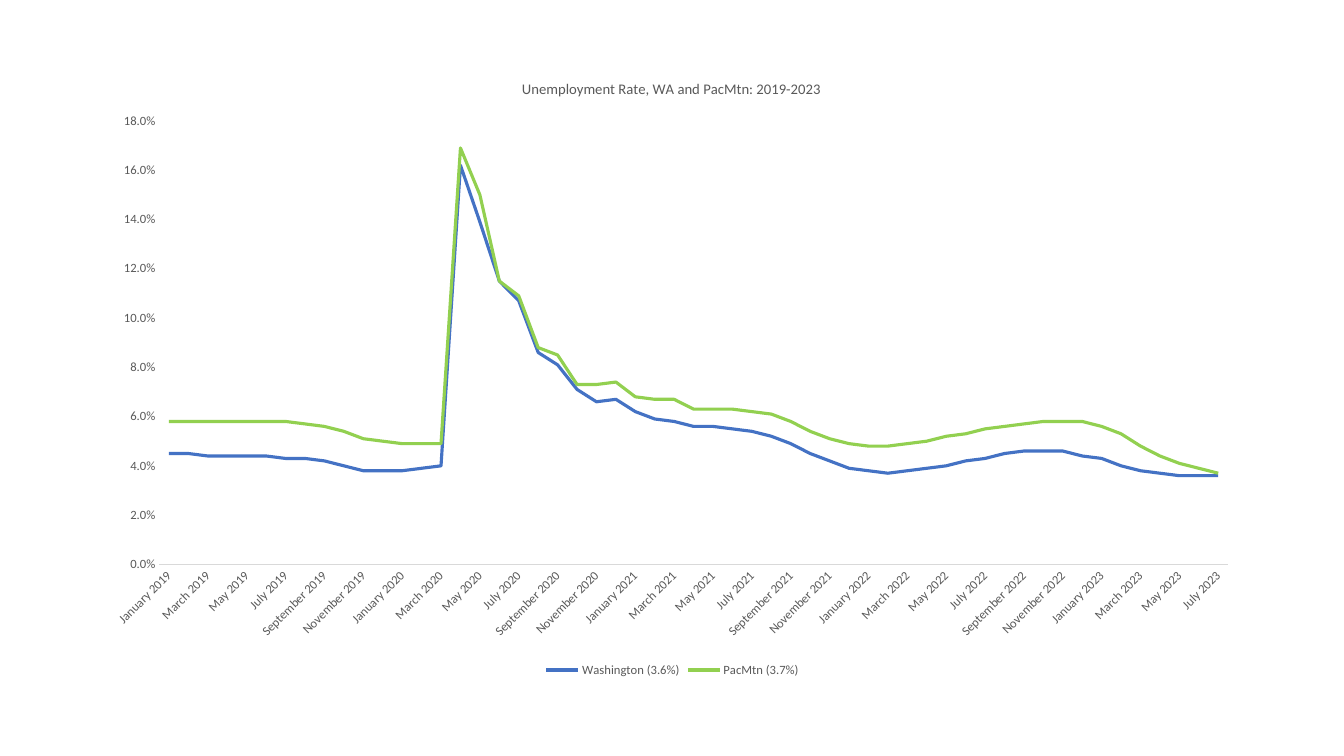
from dataclasses import dataclass

from lxml import etree
from pptx import Presentation
from pptx.chart.chart import Chart
from pptx.chart.data import CategoryChartData
from pptx.dml.color import RGBColor
from pptx.enum.chart import XL_CHART_TYPE, XL_LEGEND_POSITION, XL_MARKER_STYLE, XL_TICK_MARK
from pptx.oxml.ns import qn
from pptx.text.text import Font
from pptx.util import Inches, Pt

LINE = XL_CHART_TYPE.LINE
BOTTOM = XL_LEGEND_POSITION.BOTTOM
NO_MARKER = XL_MARKER_STYLE.NONE
NO_TICK = XL_TICK_MARK.NONE
FONT_NAME = "Calibri"
TEXT_COLOR = "595959"
AXIS_COLOR = "D9D9D9"
TITLE = "Unemployment Rate, WA and PacMtn: 2019-2023"
MONTHS = ("January", "February", "March", "April", "May", "June", "July",
          "August", "September", "October", "November", "December")


@dataclass(frozen=True)
class Rate:
    """Monthly unemployment in percent for one area."""

    name: str
    color: str
    percents: tuple[float, ...]


@dataclass(frozen=True)
class Box:
    """A place on the slide in inches."""

    left: float
    top: float
    width: float
    height: float


CHART_BOX = Box(0.92, 0.57, 11.5, 6.19)
PLOT_BOX = Box(1.58, 1.2, 10.6, 4.4)
TITLE_BOX = Box(5.15, 0.76, 3, 0.2)

RATES = (
    Rate("Washington (3.6%)", "4472C4", (
        4.5, 4.5, 4.4, 4.4, 4.4, 4.4, 4.3, 4.3, 4.2, 4.0, 3.8, 3.8,
        3.8, 3.9, 4.0, 16.2, 13.9, 11.5, 10.7, 8.6, 8.1, 7.1, 6.6, 6.7,
        6.2, 5.9, 5.8, 5.6, 5.6, 5.5, 5.4, 5.2, 4.9, 4.5, 4.2, 3.9,
        3.8, 3.7, 3.8, 3.9, 4.0, 4.2, 4.3, 4.5, 4.6, 4.6, 4.6, 4.4,
        4.3, 4.0, 3.8, 3.7, 3.6, 3.6, 3.6)),
    Rate("PacMtn (3.7%)", "92D050", (
        5.8, 5.8, 5.8, 5.8, 5.8, 5.8, 5.8, 5.7, 5.6, 5.4, 5.1, 5.0,
        4.9, 4.9, 4.9, 16.9, 15.0, 11.5, 10.9, 8.8, 8.5, 7.3, 7.3, 7.4,
        6.8, 6.7, 6.7, 6.3, 6.3, 6.3, 6.2, 6.1, 5.8, 5.4, 5.1, 4.9,
        4.8, 4.8, 4.9, 5.0, 5.2, 5.3, 5.5, 5.6, 5.7, 5.8, 5.8, 5.8,
        5.6, 5.3, 4.8, 4.4, 4.1, 3.9, 3.7)),
)


def rgb(color: str) -> RGBColor:
    """Turn a hex string into a colour."""
    return RGBColor.from_string(color)


def style_font(font: Font, size: float) -> None:
    """Give chart text its face, size and colour."""
    font.name = FONT_NAME
    font.size = Pt(size)
    font.bold = False
    font.color.rgb = rgb(TEXT_COLOR)


def place_part(part: etree._Element, index: int, box: Box, sized: bool) -> None:
    """Fix a chart part at a place on the slide."""
    for old_layout in part.findall(qn("c:layout")):
        part.remove(old_layout)
    layout = etree.Element(qn("c:layout"))
    part.insert(index, layout)
    manual = etree.SubElement(layout, qn("c:manualLayout"))
    settings = {
        "xMode": "edge",
        "yMode": "edge",
        "x": (box.left - CHART_BOX.left) / CHART_BOX.width,
        "y": (box.top - CHART_BOX.top) / CHART_BOX.height,
    }
    if sized:
        settings = {"layoutTarget": "inner", **settings,
                    "w": box.width / CHART_BOX.width,
                    "h": box.height / CHART_BOX.height}
    for name, value in settings.items():
        etree.SubElement(manual, qn(f"c:{name}")).set("val", str(value))


def style_title(chart: Chart) -> None:
    """Write and place the chart title."""
    title = chart.chart_title
    title.include_in_layout = False
    title.text_frame.text = TITLE
    style_font(title.text_frame.paragraphs[0].font, 10.5)
    place_part(title._element, 1, TITLE_BOX, sized=False)


def style_axes(chart: Chart) -> None:
    """Format the month and percent axes."""
    months, percents = chart.category_axis, chart.value_axis
    for axis in (months, percents):
        axis.major_tick_mark = NO_TICK
        axis.minor_tick_mark = NO_TICK
        axis.has_major_gridlines = False
        style_font(axis.tick_labels.font, 9)
    months.format.line.color.rgb = rgb(AXIS_COLOR)
    months.format.line.width = Pt(0.75)
    months._element.find(qn("c:txPr")).find(qn("a:bodyPr")).set("rot", "-60000000")
    percents.format.line.fill.background()
    percents.minimum_scale = 0
    percents.maximum_scale = 0.18
    percents.major_unit = 0.02
    percents.tick_labels.number_format = "#0.0%"
    percents.tick_labels.number_format_is_linked = False


def style_series(chart: Chart) -> None:
    """Draw each area as a plain coloured line."""
    chart.plots[0].vary_by_categories = False
    for series, rate in zip(chart.plots[0].series, RATES):
        series.smooth = False
        series.marker.style = NO_MARKER
        series.format.line.color.rgb = rgb(rate.color)
        series.format.line.width = Pt(2.25)


def main() -> None:
    """Build and save the unemployment slide."""
    deck = Presentation()
    deck.slide_width, deck.slide_height = Inches(13.33), Inches(7.5)
    page = deck.slides.add_slide(deck.slide_layouts[6])

    data = CategoryChartData(number_format="0.0%")
    months = [f"{month} {year}" for year in range(2019, 2024) for month in MONTHS]
    data.categories = months[:len(RATES[0].percents)]
    for rate in RATES:
        data.add_series(rate.name, [round(percent / 100, 3) for percent in rate.percents])

    chart = page.shapes.add_chart(
        LINE, Inches(CHART_BOX.left), Inches(CHART_BOX.top),
        Inches(CHART_BOX.width), Inches(CHART_BOX.height), data).chart
    style_font(chart.font, 10)
    style_title(chart)
    style_axes(chart)
    style_series(chart)
    chart.has_legend = True
    chart.legend.position = BOTTOM
    chart.legend.include_in_layout = False
    style_font(chart.legend.font, 9)
    place_part(chart._chartSpace.chart.plotArea, 0, PLOT_BOX, sized=True)
    deck.save("out.pptx")


if __name__ == "__main__":
    main()
